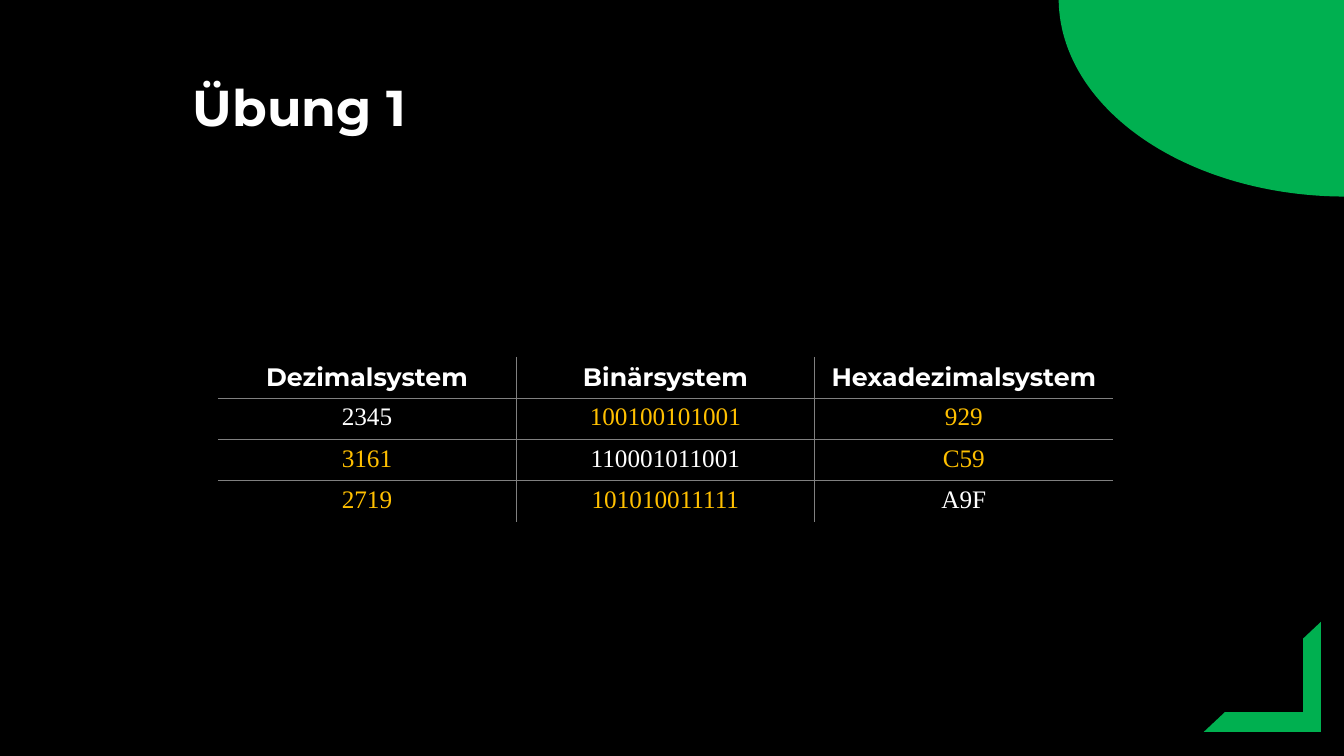
from pptx import Presentation
from pptx.dml.color import RGBColor
from pptx.enum.shapes import MSO_SHAPE as Shape
from pptx.enum.text import MSO_ANCHOR as Anchor, MSO_AUTO_SIZE as AutoSize, PP_ALIGN as Align
from pptx.oxml.ns import qn
from pptx.util import Inches, Pt
from lxml.etree import SubElement

COLORS = {"background": "000000", "accent": "00B050", "text": "FFFFFF",
          "solution": "FFC000", "grid": "808080"}
HEADING_FONT, NUMBER_FONT = "Montserrat", "Times New Roman"

HEADER = ["Dezimalsystem", "Binärsystem", "Hexadezimalsystem"]
NUMBERS = [["2345", "100100101001", "929"],
           ["3161", "110001011001", "C59"],
           ["2719", "101010011111", "A9F"]]


def rgb(name):
    return RGBColor.from_string(COLORS[name])


class ExerciseSlide:
    def __init__(self, deck):
        self.slide = deck.slides.add_slide(deck.slide_layouts[5])
        backdrop = self.slide.background.fill
        backdrop.solid()
        backdrop.fore_color.rgb = rgb("background")

    def run(self, paragraph, text, size, font=HEADING_FONT, color="text", bold=True):
        run = paragraph.add_run()
        run.text = text
        run.font.size, run.font.name, run.font.bold = Pt(size), font, bold
        run.font.color.rgb = rgb(color)

    def decoration(self, preset, left, top, width, height, adjustments, rotation=0):
        decoration = self.slide.shapes.add_shape(
            preset, Inches(left), Inches(top), Inches(width), Inches(height))
        decoration.shadow.inherit = False
        decoration.rotation = rotation
        for index, value in enumerate(adjustments):
            decoration.adjustments[index] = value
        decoration.fill.solid()
        decoration.fill.fore_color.rgb = rgb("accent")
        decoration.line.fill.background()

    def title(self, text, left, top, width, height):
        title = self.slide.shapes.title
        title.left, title.top = Inches(left), Inches(top)
        title.width, title.height = Inches(width), Inches(height)
        frame = title.text_frame
        frame.word_wrap, frame.auto_size = True, AutoSize.NONE
        frame.vertical_anchor = Anchor.TOP
        heading = frame.paragraphs[0]
        heading.alignment, heading.line_spacing = Align.LEFT, 0.9
        self.run(heading, text, 36)

    def borders(self, cell, inner_sides):
        properties = cell._tc.get_or_add_tcPr()
        for side, inner in inner_sides.items():
            line = SubElement(properties, qn(f"a:ln{side}"), w=str(Pt(1)))
            if inner:
                fill = SubElement(line, qn("a:solidFill"))
                SubElement(fill, qn("a:srgbClr"), val=COLORS["grid"])
            else:
                SubElement(line, qn("a:noFill"))

    def table(self, header, numbers, left, top, column_width, row_height):
        rows = [header] + numbers
        last_row, last_column = len(rows) - 1, len(header) - 1
        table = self.slide.shapes.add_table(
            len(rows), len(header), Inches(left), Inches(top),
            Inches(column_width * len(header)), Inches(row_height * len(rows))).table
        table.horz_banding = False
        for column in table.columns:
            column.width = Inches(column_width)
        for r, values in enumerate(rows):
            table.rows[r].height = Inches(row_height)
            for c, value in enumerate(values):
                cell = table.cell(r, c)
                self.borders(cell, {"L": c > 0, "R": c < last_column,
                                    "T": r > 0, "B": r < last_row})
                cell.fill.background()
                entry = cell.text_frame.paragraphs[0]
                entry.alignment = Align.CENTER
                if r == 0:
                    self.run(entry, value, 18)
                else:
                    # Given numbers lie on the diagonal, solutions beside it
                    color = "text" if c == r - 1 else "solution"
                    self.run(entry, value, 18, NUMBER_FONT, color, bold=False)


def main():
    deck = Presentation()
    deck.slide_width, deck.slide_height = Inches(13.33), Inches(7.5)
    exercise = ExerciseSlide(deck)

    # Corner decorations
    exercise.decoration(Shape.HALF_FRAME, 11.94, 6.17, 1.16, 1.09, [0.18, 0.16], rotation=180)
    exercise.decoration(Shape.PIE, 10.5, -1.98, 5.69, 3.93, [54, 108])

    # Heading
    exercise.title("Übung 1", 1.81, 0.77, 10.85, 0.71)

    # Number systems
    exercise.table(HEADER, NUMBERS, 2.16, 3.54, 2.96, 0.41)

    deck.save("out.pptx")


if __name__ == "__main__":
    main()
